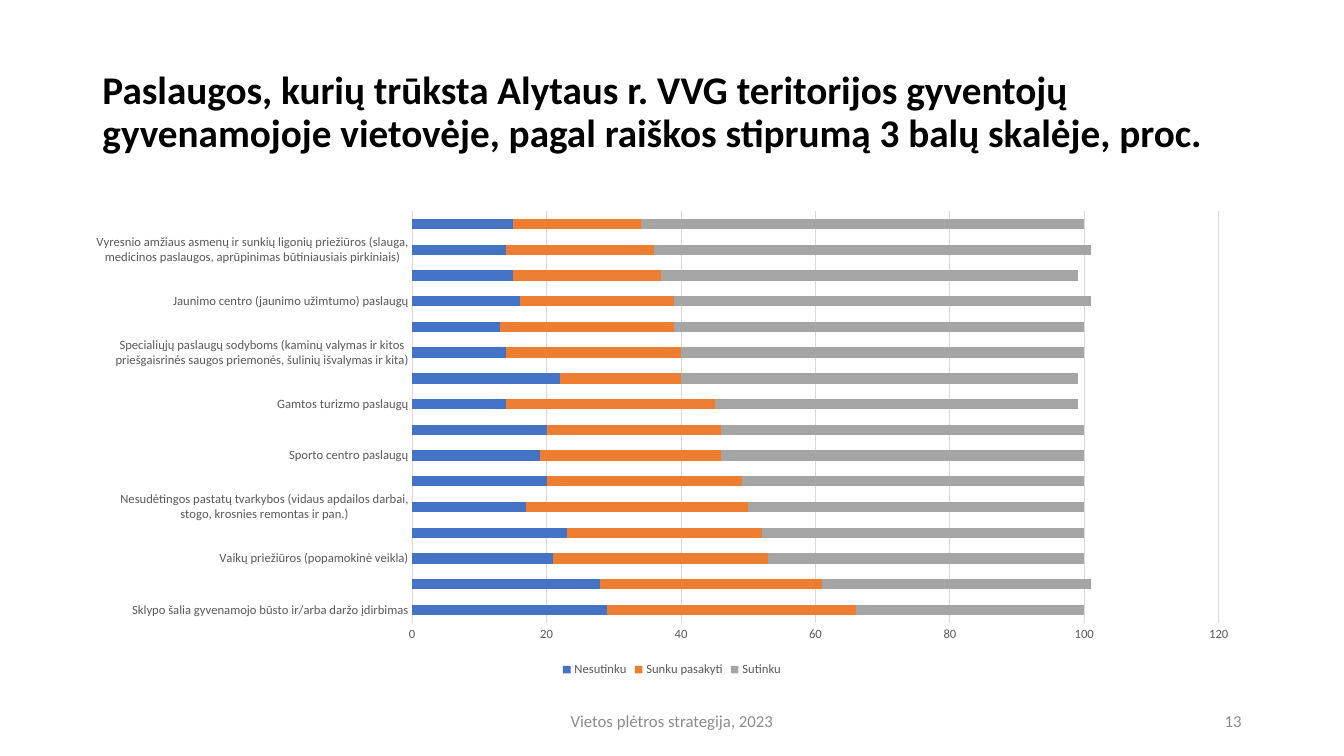
from pptx import Presentation
from pptx.chart.data import CategoryChartData
from pptx.dml.color import RGBColor
from pptx.enum.chart import XL_CHART_TYPE, XL_LEGEND_POSITION, XL_TICK_MARK
from pptx.enum.text import MSO_ANCHOR, MSO_AUTO_SIZE, PP_ALIGN
from pptx.util import Pt

BARS = XL_CHART_TYPE.BAR_STACKED
BOTTOM = XL_LEGEND_POSITION.BOTTOM
NO_TICK = XL_TICK_MARK.NONE
MIDDLE = MSO_ANCHOR.MIDDLE
NO_FIT = MSO_AUTO_SIZE.NONE
LEFT, CENTER, RIGHT = PP_ALIGN.LEFT, PP_ALIGN.CENTER, PP_ALIGN.RIGHT

BLACK = RGBColor(0x00, 0x00, 0x00)
DARK = RGBColor(0x59, 0x59, 0x59)
GRAY = RGBColor(0x8C, 0x8C, 0x8C)
PALE = RGBColor(0xD9, 0xD9, 0xD9)
BLUE = RGBColor(0x44, 0x72, 0xC4)
ORANGE = RGBColor(0xED, 0x7D, 0x31)
SILVER = RGBColor(0xA5, 0xA5, 0xA5)
FONT = "Calibri"

TITLE = ("Paslaugos, kurių trūksta Alytaus r. VVG teritorijos gyventojų "
         "gyvenamojoje vietovėje, pagal raiškos stiprumą 3 balų skalėje, proc.")
FOOTER = "Vietos plėtros strategija, 2023"
NUMBER = "13"

# Service, then shares that disagree, are unsure, agree
SERVICES = [
    ("Sklypo šalia gyvenamojo būsto ir/arba daržo įdirbimas", 29, 37, 34),
    ("Automobilių ir žemės ūkio technikos remonto", 28, 33, 40),
    ("Vaikų priežiūros (popamokinė veikla)", 21, 32, 47),
    ("Pagalbos apsirūpinant kuru (malkomis, briketais, kuro granulėmis)",
     23, 29, 48),
    ("Nesudėtingos pastatų tvarkybos (vidaus apdailos darbai, stogo, "
     "krosnies remontas ir pan.)", 17, 33, 50),
    ("Buitinės technikos remonto", 20, 29, 51),
    ("Sporto centro paslaugų", 19, 27, 54),
    ("Aplinkos tvarkymo (vejų priežiūros, medžių genėjimas)", 20, 26, 54),
    ("Gamtos turizmo paslaugų", 14, 31, 54),
    ("Buitinių (kirpyklos, siuvyklos, pirties, drabužių ar avalynės "
     "taisyklos) paslaugų", 22, 18, 59),
    ("Specialiųjų paslaugų sodyboms (kaminų valymas ir kitos priešgaisrinės "
     "saugos priemonės, šulinių išvalymas ir kita)", 14, 26, 60),
    ("Transporto (pavežėjimo) paslaugų (nuvykti pas gydytojus, į banką, "
     "į bažnyčią ir kita)", 13, 26, 61),
    ("Jaunimo centro (jaunimo užimtumo) paslaugų", 16, 23, 62),
    ("Užimtumo ir laisvalaikio (kavinės, žaidimų aikštelės, paplūdimio "
     "ir pan.)", 15, 22, 62),
    ("Vyresnio amžiaus asmenų ir sunkių ligonių priežiūros (slauga, medicinos "
     "paslaugos, aprūpinimas būtiniausiais pirkiniais)", 14, 22, 65),
    ("Sveikatinimosi procedūrų", 15, 19, 66),
]
ANSWERS = [("Nesutinku", BLUE), ("Sunku pasakyti", ORANGE),
           ("Sutinku", SILVER)]

WIDE, HIGH = 960, 540
EDGE = 66
FULL = WIDE - 2 * EDGE
FOOT_TOP, FOOT_HIGH = 500.5, 28.75
FOOT_WIDE, NUM_WIDE = 324, 216


def style(font, size, color, bold=False):
    font.name = FONT
    font.size = Pt(size)
    font.bold = bold
    font.color.rgb = color


def write(shape, text, size=12, color=GRAY, bold=False, align=LEFT, space=1.0):
    frame = shape.text_frame
    frame.word_wrap = True
    frame.auto_size = NO_FIT
    frame.vertical_anchor = MIDDLE
    para = frame.paragraphs[0]
    para.alignment = align
    para.line_spacing = space
    run = para.add_run()
    run.text = text
    style(run.font, size, color, bold)


def add_bars(slide):
    data = CategoryChartData(number_format="0")
    data.categories = [row[0] for row in SERVICES]
    for col, (name, _) in enumerate(ANSWERS, 1):
        data.add_series(name, [row[col] for row in SERVICES])
    chart = slide.shapes.add_chart(
        BARS, Pt(EDGE), Pt(144), Pt(FULL), Pt(342.5), data).chart
    style(chart.font, 10, BLACK)
    chart.has_title = False

    plot = chart.plots[0]
    plot.gap_width = 150
    plot.overlap = 100
    plot.vary_by_categories = False
    for series, (_, color) in zip(plot.series, ANSWERS):
        series.format.fill.solid()
        series.format.fill.fore_color.rgb = color

    names, scale = chart.category_axis, chart.value_axis
    for axis in (names, scale):
        axis.major_tick_mark = axis.minor_tick_mark = NO_TICK
        style(axis.tick_labels.font, 9, DARK)
    scale.minimum_scale, scale.maximum_scale, scale.major_unit = 0, 120, 20
    scale.has_major_gridlines = True
    scale.format.line.fill.background()
    for line in (names.format.line, scale.major_gridlines.format.line):
        line.color.rgb = PALE
        line.width = Pt(0.75)

    chart.has_legend = True
    chart.legend.position = BOTTOM
    chart.legend.include_in_layout = False
    style(chart.legend.font, 9, DARK)


def main():
    deck = Presentation()
    deck.slide_width, deck.slide_height = Pt(WIDE), Pt(HIGH)
    slide = deck.slides.add_slide(deck.slide_layouts[5])

    title = slide.shapes.title
    title.left, title.top = Pt(EDGE), Pt(28.75)
    title.width, title.height = Pt(FULL), Pt(104.4)
    write(title, TITLE, size=28, color=BLACK, bold=True, space=0.9)

    add_bars(slide)

    for text, left, width, align in (
            (FOOTER, (WIDE - FOOT_WIDE) / 2, FOOT_WIDE, CENTER),
            (NUMBER, WIDE - EDGE - NUM_WIDE, NUM_WIDE, RIGHT)):
        box = slide.shapes.add_textbox(
            Pt(left), Pt(FOOT_TOP), Pt(width), Pt(FOOT_HIGH))
        write(box, text, align=align)

    deck.save("out.pptx")


if __name__ == "__main__":
    main()
